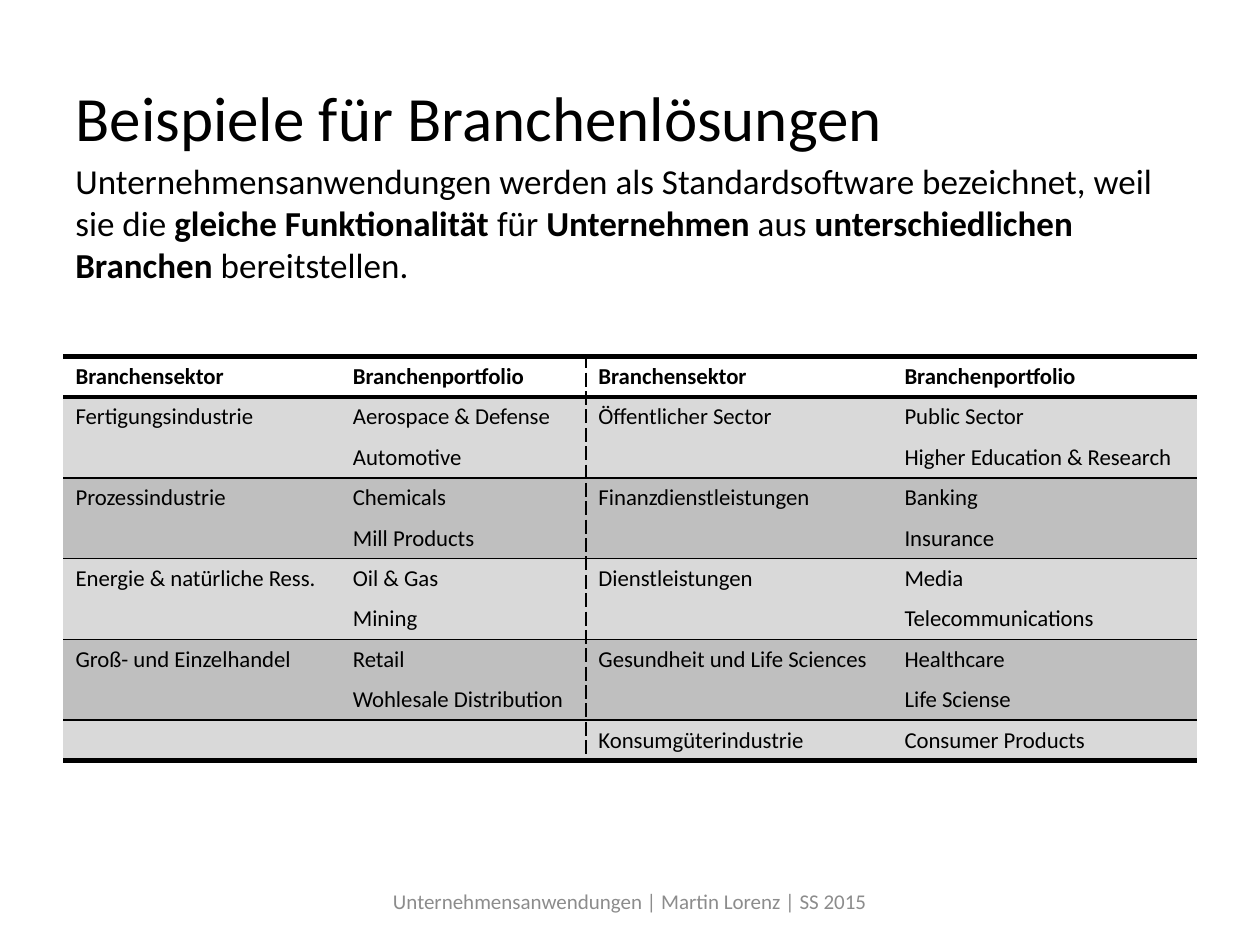
from lxml.etree import SubElement
from pptx import Presentation
from pptx.dml.color import RGBColor
from pptx.enum.text import MSO_ANCHOR as Anchor, MSO_AUTO_SIZE as AutoSize, PP_ALIGN as Align
from pptx.oxml.ns import qn
from pptx.util import Cm, Pt

COLORS = {"text": "000000", "footer": "8C8C8C", "header": "FFFFFF",
          "light": "D9D9D9", "dark": "BFBFBF", "line": "000000"}


def write(paragraph, text, size, color="text", bold=False):
    span = paragraph.add_run()
    span.text = text
    formats = {"name": "Calibri", "size": Pt(size), "bold": bold}
    for name, value in formats.items():
        setattr(span.font, name, value)
    span.font.color.rgb = RGBColor.from_string(COLORS[color])


def set_border(cell, side, width, dash):
    line = SubElement(cell._tc.get_or_add_tcPr(), qn(f"a:ln{side}"), w=str(Pt(width)))
    if not width:
        SubElement(line, qn("a:noFill"))
        return
    fill = SubElement(line, qn("a:solidFill"))
    SubElement(fill, qn("a:srgbClr"), val=COLORS["line"])
    SubElement(line, qn("a:prstDash"), val=dash)


deck = Presentation()
deck.slide_width, deck.slide_height = Cm(25.4), Cm(19.05)
page = deck.slides.add_slide(deck.slide_layouts[5])

title = page.shapes.title
title_format = {"left": Cm(1.27), "top": Cm(0.76), "width": Cm(22.86), "height": Cm(3.18)}
for name, value in title_format.items():
    setattr(title, name, value)
title.text_frame.vertical_anchor = Anchor.MIDDLE
title.text_frame.auto_size = AutoSize.NONE
title.text_frame.paragraphs[0].alignment = Align.LEFT
write(title.text_frame.paragraphs[0], "Beispiele für Branchenlösungen", 36)

rows = [
    ("Branchensektor", "Branchenportfolio", "Branchensektor", "Branchenportfolio"),
    ("Fertigungsindustrie", "Aerospace & Defense", "Öffentlicher Sector", "Public Sector"),
    ("", "Automotive", "", "Higher Education & Research"),
    ("Prozessindustrie", "Chemicals", "Finanzdienstleistungen", "Banking"),
    ("", "Mill Products", "", "Insurance"),
    ("Energie & natürliche Ress.", "Oil & Gas", "Dienstleistungen", "Media"),
    ("", "Mining", "", "Telecommunications"),
    ("Groß- und Einzelhandel", "Retail", "Gesundheit und Life Sciences", "Healthcare"),
    ("", "Wohlesale Distribution", "", "Life Sciense"),
    ("", "", "Konsumgüterindustrie", "Consumer Products"),
]
column_widths = [5.59, 4.95, 6.17, 6.15]
row_height = 0.81
row_lines = {0: 3, 1: 2.25, 3: 1, 5: 1, 7: 1, 9: 1, 10: 3}
column_lines = {2: 1}

table = page.shapes.add_table(len(rows), len(column_widths), Cm(1.27), Cm(7.19),
                              Cm(sum(column_widths)), Cm(row_height * len(rows))).table
table.first_row = table.horz_banding = False
for column, width in zip(table.columns, column_widths):
    column.width = Cm(width)
for r, texts in enumerate(rows):
    table.rows[r].height = Cm(row_height)
    shade = "header" if r == 0 else ("light", "dark")[(r - 1) // 2 % 2]
    for c, text in enumerate(texts):
        cell = table.cell(r, c)
        paragraph = cell.text_frame.paragraphs[0]
        if text:
            write(paragraph, text, 13, bold=r == 0)
        else:
            SubElement(paragraph._p, qn("a:endParaRPr"), sz="1300")
        set_border(cell, "L", column_lines.get(c, 0), "sysDash")
        set_border(cell, "R", column_lines.get(c + 1, 0), "sysDash")
        set_border(cell, "T", row_lines.get(r, 0), "solid")
        set_border(cell, "B", row_lines.get(r + 1, 0), "solid")
        cell.fill.solid()
        cell.fill.fore_color.rgb = RGBColor.from_string(COLORS[shade])

intro = page.shapes.add_textbox(Cm(1.27), Cm(3.1), Cm(22.86), Cm(2.82))
intro.text_frame.word_wrap = True
intro_parts = [
    "Unternehmensanwendungen werden als Standardsoftware bezeichnet, weil sie die ",
    "gleiche Funktionalität ", "für ", "Unternehmen ", "aus ",
    "unterschiedlichen Branchen ", "bereitstellen.",
]
for i, text in enumerate(intro_parts):
    write(intro.text_frame.paragraphs[0], text, 20, bold=i % 2 == 1)

footer = page.shapes.add_textbox(Cm(1.9), Cm(17.65), Cm(21.6), Cm(1.02))
footer.text_frame.word_wrap = True
footer.text_frame.vertical_anchor = Anchor.MIDDLE
footer.text_frame.paragraphs[0].alignment = Align.CENTER
write(footer.text_frame.paragraphs[0], "Unternehmensanwendungen | Martin Lorenz | SS 2015", 12, "footer")

deck.save("out.pptx")
